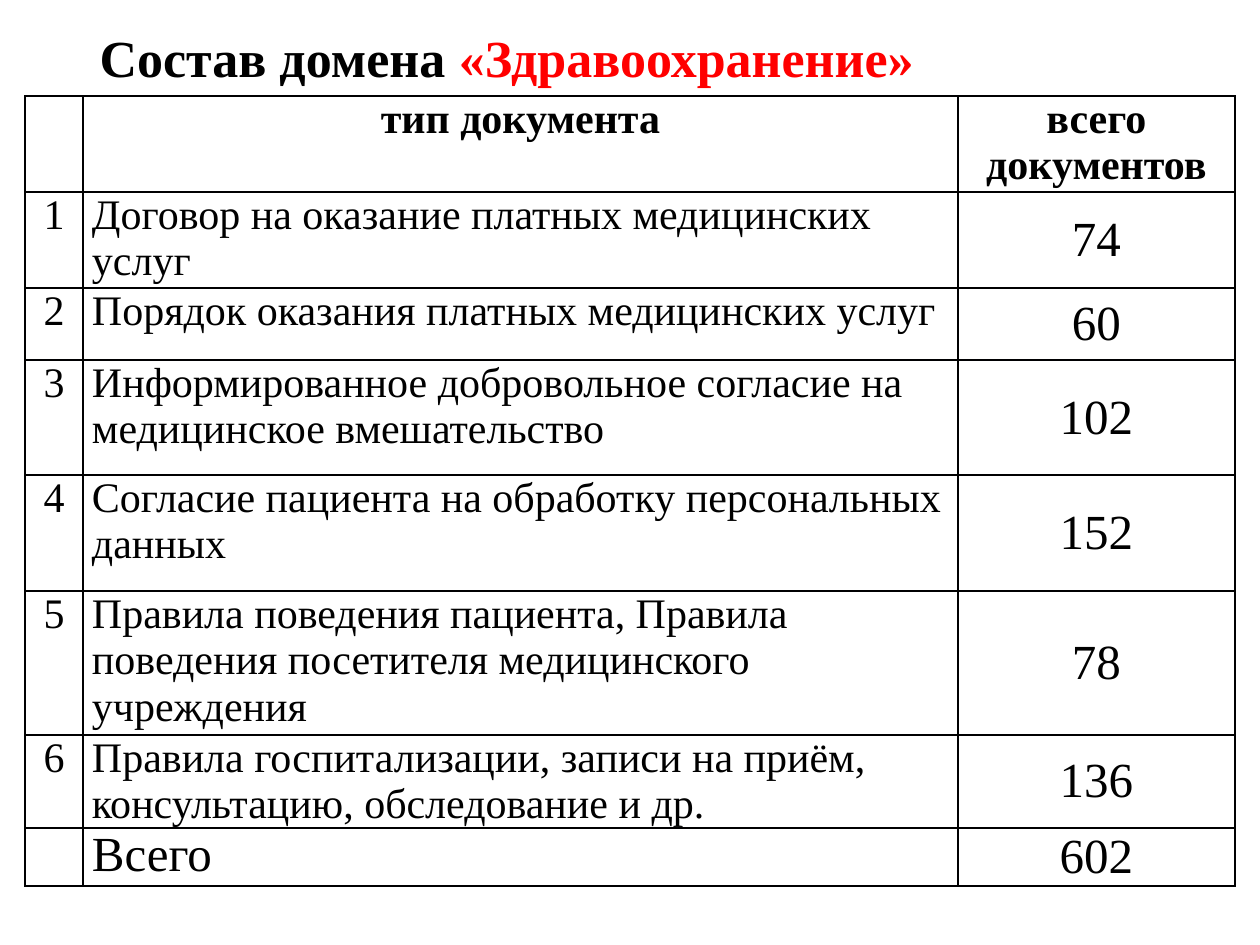
import dataclasses

import lxml.etree
import pptx
import pptx.dml.color
import pptx.enum.text
import pptx.oxml.ns
import pptx.util

ALIGN = pptx.enum.text.PP_ALIGN
ANCHOR = pptx.enum.text.MSO_ANCHOR


@dataclasses.dataclass(frozen=True)
class Theme:
    """Colours, type sizes and scale of the slide."""

    font: str = "Times New Roman"
    ink: str = "000000"
    accent: str = "FF0000"
    paper: str = "FFFFFF"
    border: str = "000001"
    title: float = 29.7
    body: int = 24
    figure: int = 28
    pixels_per_inch: int = 126


THEME = Theme()
TITLE = [("Состав домена ", THEME.ink), ("«Здравоохранение»", THEME.accent)]
HEADINGS = ("", "тип документа", "всего документов")
DOCUMENTS = [
    ("Договор на оказание платных медицинских услуг", 74),
    ("Порядок оказания платных медицинских услуг", 60),
    ("Информированное добровольное согласие на медицинское вмешательство", 102),
    ("Согласие пациента на обработку персональных данных", 152),
    ("Правила поведения пациента, Правила поведения посетителя медицинского учреждения", 78),
    ("Правила госпитализации, записи на приём, консультацию, обследование и др.", 136),
]
COLUMN_WIDTHS = (58, 875, 277)
ROW_HEIGHTS = (96, 96, 72, 115, 116, 144, 93, 58)


def px(length):
    """Turn whole pixels into EMU."""
    return pptx.util.Emu(length * 914400 // THEME.pixels_per_inch)


def set_all(target, values):
    """Set each named attribute of the target."""
    for name, value in values.items():
        setattr(target, name, value)


def add_span(para, text, size, bold=False, color=THEME.ink):
    """Add a formatted run to a paragraph."""
    span = para.add_run()
    span.text = text
    set_all(span.font, {"name": THEME.font, "size": pptx.util.Pt(size), "bold": bold})
    span.font.color.rgb = pptx.dml.color.RGBColor.from_string(color)


def write_title(page):
    """Place the title and write its two-colour text."""
    box = page.shapes.title
    set_all(box, {"left": px(87), "top": px(26), "width": px(1086), "height": px(69)})
    set_all(box.text_frame, {
        "word_wrap": True,
        "auto_size": pptx.enum.text.MSO_AUTO_SIZE.NONE,
        "vertical_anchor": ANCHOR.MIDDLE,
    })
    para = box.text_frame.paragraphs[0]
    set_all(para, {"alignment": ALIGN.LEFT, "line_spacing": 0.9})
    for text, color in TITLE:
        add_span(para, text, THEME.title, True, color)


def draw_borders(cell):
    """Draw a thin line on all four sides of a cell."""
    properties = cell._tc.get_or_add_tcPr()
    qn = pptx.oxml.ns.qn
    for side in ("lnL", "lnR", "lnT", "lnB"):
        line = lxml.etree.SubElement(properties, qn(f"a:{side}"), w=str(pptx.util.Pt(1)))
        fill = lxml.etree.SubElement(line, qn("a:solidFill"))
        lxml.etree.SubElement(fill, qn("a:srgbClr"), val=THEME.border)


def fill_cell(cell, text, size, bold, alignment, anchor):
    """Format one cell and write its text."""
    set_all(cell, {
        "margin_left": px(9), "margin_right": px(9),
        "margin_top": 0, "margin_bottom": 0, "vertical_anchor": anchor,
    })
    draw_borders(cell)
    cell.fill.solid()
    cell.fill.fore_color.rgb = pptx.dml.color.RGBColor.from_string(THEME.paper)
    para = cell.text_frame.paragraphs[0]
    para.alignment = alignment
    if text:
        add_span(para, text, size, bold)


def add_document_table(page):
    """Add the table of document types with its total."""
    numbered = [(str(number), name, str(count))
                for number, (name, count) in enumerate(DOCUMENTS, 1)]
    total = ("", "Всего", str(sum(count for _, count in DOCUMENTS)))
    rows = [HEADINGS, *numbered, total]
    table = page.shapes.add_table(
        len(rows), len(HEADINGS), px(25), px(96),
        px(sum(COLUMN_WIDTHS)), px(sum(ROW_HEIGHTS))).table
    set_all(table, {"first_row": False, "horz_banding": False})
    for column, width in zip(table.columns, COLUMN_WIDTHS):
        column.width = px(width)
    for row, height in zip(table.rows, ROW_HEIGHTS):
        row.height = px(height)
    for row_index, texts in enumerate(rows):
        heading = row_index == 0
        for column_index, text in enumerate(texts):
            figure = not heading and column_index == 2
            large = figure or texts is total
            fill_cell(
                table.cell(row_index, column_index), text,
                THEME.figure if large else THEME.body, heading,
                ALIGN.LEFT if column_index == 1 and not heading else ALIGN.CENTER,
                ANCHOR.MIDDLE if figure else ANCHOR.TOP)


def main():
    """Build the slide and save it."""
    deck = pptx.Presentation()
    set_all(deck, {"slide_width": px(1260), "slide_height": px(945)})
    page = deck.slides.add_slide(deck.slide_layouts.get_by_name("Title Only"))
    write_title(page)
    add_document_table(page)
    deck.save("out.pptx")


if __name__ == "__main__":
    main()
